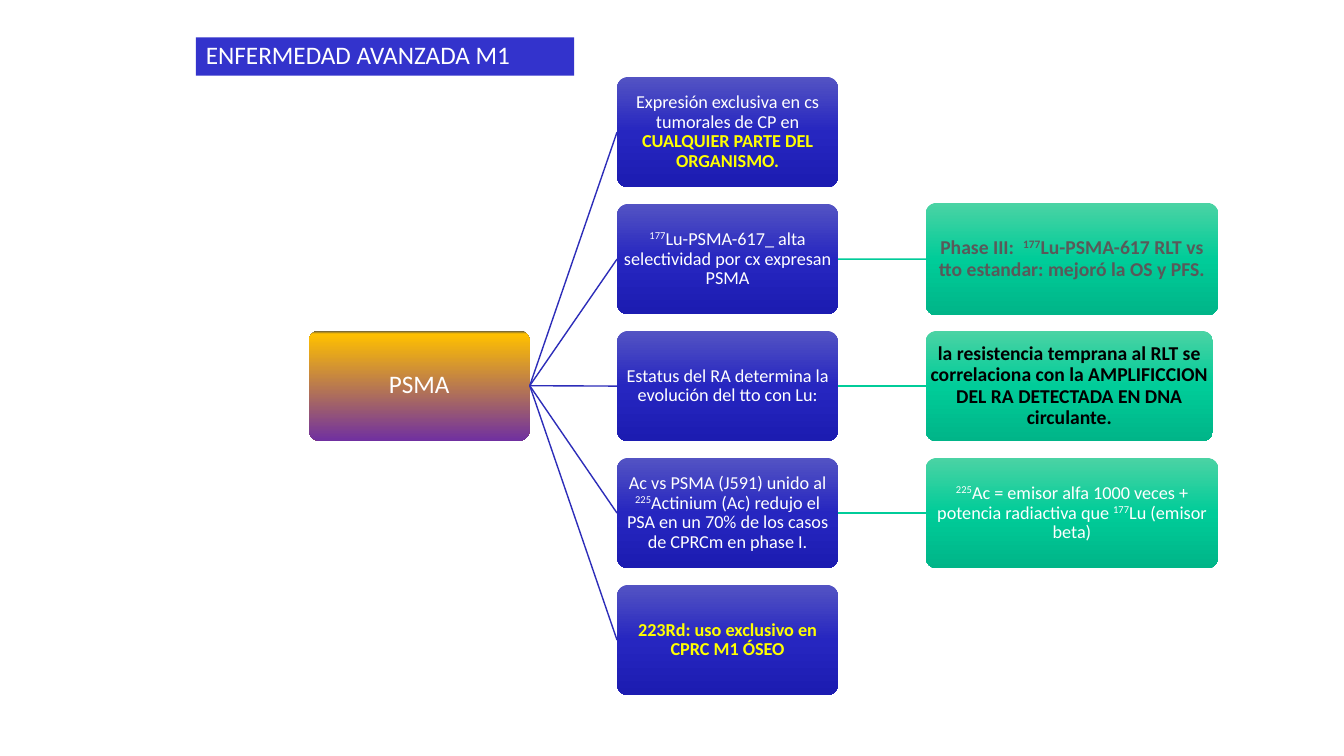
from lxml import etree
from pptx import Presentation
from pptx.dml.color import RGBColor
from pptx.enum.shapes import MSO_CONNECTOR, MSO_SHAPE
from pptx.enum.text import MSO_ANCHOR, PP_ALIGN
from pptx.oxml.ns import qn
from pptx.util import Cm, Pt

STRAIGHT = MSO_CONNECTOR.STRAIGHT
RECT, ROUNDED = MSO_SHAPE.RECTANGLE, MSO_SHAPE.ROUNDED_RECTANGLE
MIDDLE = MSO_ANCHOR.MIDDLE
LEFT, CENTER = PP_ALIGN.LEFT, PP_ALIGN.CENTER

COLORS = {
    "white": "FFFFFF", "yellow": "FFFF00", "gray": "595959", "black": "000000",
    "title": "3333CC", "blue line": "2D2DB9", "green line": "00CC99",
}
GRADIENTS = {
    "root": [(0, "4B4B4B"), (3, "FFC000"), (100, "7030A0"), (100, "000000")],
    "blue": [(0, "5353C3"), (50, "2626C0"), (100, "1C1CB1")],
    "green": [(0, "4BD3A4"), (50, "00CC99"), (100, "00B588")],
}

prs = Presentation()
prs.slide_width, prs.slide_height = Cm(33.87), Cm(19.05)
s = prs.slides.add_slide(prs.slide_layouts[6])


def add_node(left, middle, width, height, gradient, size, runs):
    """Rounded box centred on a height; runs are (text, colour, bold, raised)."""
    sp = s.shapes.add_shape(ROUNDED, Cm(left), Cm(middle - height / 2), Cm(width), Cm(height))
    sp.adjustments[0] = 0.1
    sp.shadow.inherit = False
    sp.line.fill.background()
    sp.fill.gradient()
    sp.fill.gradient_angle = 270
    stops = sp._element.spPr.find(qn("a:gradFill")).find(qn("a:gsLst"))
    for stop in list(stops):
        stops.remove(stop)
    for position, color in GRADIENTS[gradient]:
        stop = etree.SubElement(stops, qn("a:gs"), pos=str(position * 1000))
        etree.SubElement(stop, qn("a:srgbClr"), val=color)
    tf = sp.text_frame
    tf.word_wrap = True
    tf.vertical_anchor = MIDDLE
    tf.margin_left = tf.margin_right = tf.margin_top = tf.margin_bottom = Cm(0.03)
    p = tf.paragraphs[0]
    p.alignment = CENTER
    p.line_spacing = 0.9
    for text, color, bold, raised in runs:
        r = p.add_run()
        r.text = text
        r.font.name = "Calibri"
        r.font.size = Pt(size)
        r.font.bold = bold
        r.font.color.rgb = RGBColor.from_string(COLORS[color])
        if raised:
            r.font._element.set("baseline", "30000")
    return sp


def join(start, end, color):
    """Line from the right side of one box to the left side of another."""
    line = s.shapes.add_connector(STRAIGHT, 0, 0, 0, 0)
    line.begin_connect(start, 3)
    line.end_connect(end, 1)
    line.line.color.rgb = RGBColor.from_string(COLORS[color])
    line.line.width = Pt(1)
    etree.SubElement(line._element.spPr, qn("a:effectLst"))


# Tree content: one row per branch, with an optional leaf (width, height, size, runs)
BRANCHES = [
    ([("Expresión exclusiva en cs tumorales de CP en ", "white", False, False),
      ("CUALQUIER PARTE DEL ORGANISMO.", "yellow", True, False)], None),
    ([("177", "white", False, True),
      ("Lu-PSMA-617_ alta selectividad por cx expresan PSMA", "white", False, False)],
     (7.37, 2.84, 14,
      [("Phase III:  ", "gray", True, False),
       ("177", "gray", True, True),
       ("Lu-PSMA-617 RLT vs tto estandar: mejoró la OS y PFS.", "gray", True, False)])),
    ([("Estatus del RA determina la evolución del tto con Lu:", "white", False, False)],
     (7.24, 2.78, 14,
      [("la resistencia temprana al RLT se correlaciona con la AMPLIFICCION "
        "DEL RA DETECTADA EN DNA circulante.", "black", True, False)])),
    ([("Ac vs PSMA (J591) unido al ", "white", False, False),
      ("225", "white", False, True),
      ("Actinium (Ac) redujo el PSA en un 70% de los casos de CPRCm en phase I.",
       "white", False, False)],
     (7.37, 2.78, 13,
      [("225", "white", False, True),
       ("Ac = emisor alfa 1000 veces + potencia radiactiva que ", "white", False, False),
       ("177", "white", False, True),
       ("Lu (emisor beta)", "white", False, False)])),
    ([("223Rd: uso exclusivo en CPRC M1 ÓSEO", "yellow", True, False)], None),
]
NODE_W, NODE_H = 5.57, 2.78
FIRST_MIDDLE, PITCH = 3.33, 3.2

# Root, branches and leaves
root = add_node(7.78, 9.72, NODE_W, NODE_H, "root", 18, [("PSMA", "white", False, False)])
for i, (runs, leaf) in enumerate(BRANCHES):
    middle = FIRST_MIDDLE + i * PITCH
    branch = add_node(15.55, middle, NODE_W, NODE_H, "blue", 13, runs)
    join(root, branch, "blue line")
    if leaf:
        width, height, size, leaf_runs = leaf
        leaf_node = add_node(23.33, middle, width, height, "green", size, leaf_runs)
        join(branch, leaf_node, "green line")

# Title bar
title = s.shapes.add_shape(RECT, Cm(4.94), Cm(0.94), Cm(9.53), Cm(0.97))
title.shadow.inherit = False
title.fill.solid()
title.fill.fore_color.rgb = RGBColor.from_string(COLORS["title"])
title.line.fill.background()
tf = title.text_frame
tf.word_wrap = True
tf.vertical_anchor = MIDDLE
p = tf.paragraphs[0]
p.alignment = LEFT
p.line_spacing = 0.93
r = p.add_run()
r.text = "ENFERMEDAD AVANZADA M1"
r.font.name = "Calibri"
r.font.size = Pt(18)
r.font.color.rgb = RGBColor.from_string(COLORS["white"])

prs.save("out.pptx")
